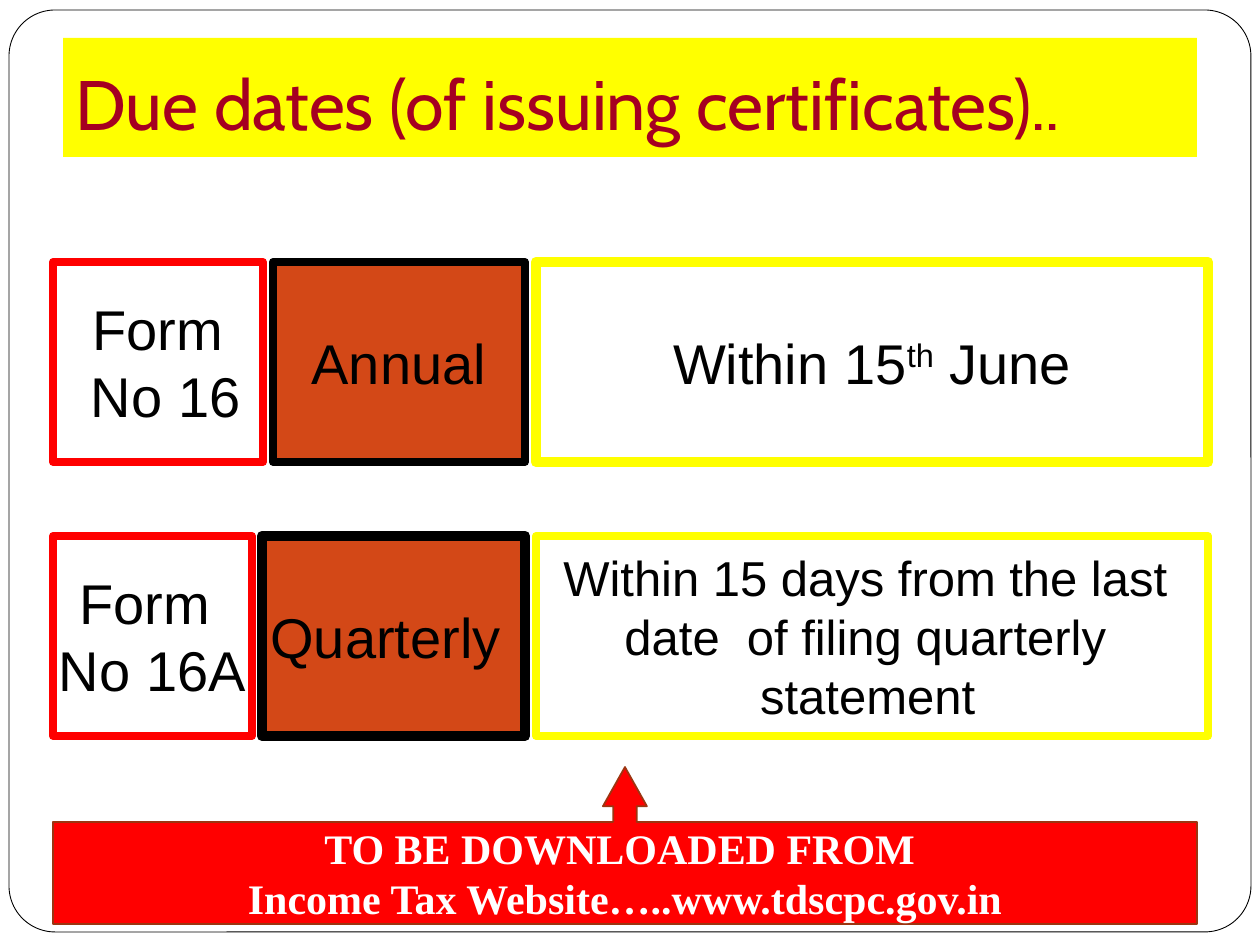
from dataclasses import dataclass

from pptx import Presentation
from pptx import util as u
from pptx.dml.color import RGBColor
from pptx.enum import shapes, text

EMU_PER_PX = 914400 / 126


@dataclass(frozen=True)
class Theme:
    white: str = "FFFFFF"
    black: str = "000000"
    yellow: str = "FFFF00"
    red: str = "FF0000"
    orange: str = "D34817"
    brown: str = "9C3511"
    crimson: str = "A50021"
    title_font: str = "Cabin"
    body_font: str = "Arial"
    callout_font: str = "Times New Roman"
    title_size: int = 40
    label_size: int = 32
    detail_size: int = 28
    callout_size: int = 24
    small_size: int = 18
    thin: float = 4.5
    thick: float = 6


THEME = Theme()
ROW_HEIGHT = 200


def px(length):
    return round(length * EMU_PER_PX)


def color(value):
    return RGBColor.from_string(value)


def add_run(paragraph, words, *, font=THEME.body_font, size=THEME.label_size,
            fill=THEME.black, bold=False, superscript=False):
    run = paragraph.add_run()
    run.text = words
    run.font.name = font
    run.font.size = u.Pt(size)
    run.font.bold = bold
    run.font.color.rgb = color(fill)
    if superscript:
        run.font._element.set("baseline", "30000")


def write_lines(frame, lines, *, align=text.PP_ALIGN.CENTER,
                anchor=text.MSO_ANCHOR.MIDDLE, wrap=True, **style):
    frame.word_wrap = wrap
    frame.auto_size = text.MSO_AUTO_SIZE.NONE
    frame.vertical_anchor = anchor
    for index, line in enumerate(lines):
        paragraph = frame.add_paragraph() if index else frame.paragraphs[0]
        paragraph.alignment = align
        for words, changes in ([(line, {})] if isinstance(line, str) else line):
            add_run(paragraph, words, **{**style, **changes})


def add_block(slide, kind, box, fill, line, width, adjustments=()):
    shape = slide.shapes.add_shape(kind, *map(px, box))
    shape.shadow.inherit = False
    shape.fill.solid()
    shape.fill.fore_color.rgb = color(fill)
    shape.line.color.rgb = color(line)
    shape.line.width = u.Pt(width)
    for index, value in enumerate(adjustments):
        shape.adjustments[index] = value
    return shape


def add_cell(slide, left, top, width, lines, fill, line, line_width, **style):
    shape = add_block(slide, shapes.MSO_SHAPE.RECTANGLE,
                      (left, top, width, ROW_HEIGHT), fill, line, line_width)
    write_lines(shape.text_frame, lines, wrap=False, **style)


def add_due_date(slide, top, columns, form, period, deadline, widths, **style):
    form_box, period_box, deadline_box = columns
    form_line, period_line, deadline_line = widths
    add_cell(slide, form_box[0], top, form_box[1], form,
             THEME.white, THEME.red, form_line)
    add_cell(slide, period_box[0], top, period_box[1], period,
             THEME.orange, THEME.black, period_line)
    add_cell(slide, deadline_box[0], top, deadline_box[1], deadline,
             THEME.white, THEME.yellow, deadline_line, **style)


def set_title(slide, words):
    title = slide.shapes.title
    title.left, title.top, title.width, title.height = map(px, (63, 38, 1134, 119))
    title.fill.solid()
    title.fill.fore_color.rgb = color(THEME.yellow)
    frame = title.text_frame
    frame.margin_left = frame.margin_right = frame.margin_bottom = u.Inches(0.1)
    frame.margin_top = u.Inches(0.05)
    write_lines(frame, [words], align=text.PP_ALIGN.LEFT,
                anchor=text.MSO_ANCHOR.BOTTOM, font=THEME.title_font,
                size=THEME.title_size, fill=THEME.crimson)


def add_frame(slide):
    frame = add_block(slide, shapes.MSO_SHAPE.ROUNDED_RECTANGLE,
                      (9, 10, 1242, 922), THEME.white, THEME.black, 0.5, [0.05])
    slide.shapes._spTree.insert(2, frame._element)


def add_download_callout(slide):
    callout = add_block(slide, shapes.MSO_SHAPE.UP_ARROW_CALLOUT,
                        (53, 767, 1144, 157), THEME.red, THEME.brown, 1,
                        [0.15, 0.14, 0.25, 0.65])
    write_lines(callout.text_frame,
                ["TO BE DOWNLOADED FROM ",
                 "Income Tax Website…..www.tdscpc.gov.in"],
                font=THEME.callout_font, size=THEME.callout_size,
                fill=THEME.white, bold=True)


def main():
    presentation = Presentation()
    presentation.slide_width = px(1260)
    presentation.slide_height = px(945)
    slide = presentation.slides.add_slide(presentation.slide_layouts[5])
    add_frame(slide)
    set_title(slide, "Due dates (of issuing certificates)..")
    add_due_date(slide, 262, [(53, 210), (273, 252), (536, 672)],
                 ["Form", " No 16"], ["Annual"],
                 [[("Within 15", {}), ("th", {"superscript": True}), (" June", {})]],
                 (THEME.thin, THEME.thin, THEME.thick))
    add_due_date(slide, 536, [(53, 199), (262, 263), (536, 672)],
                 ["Form ", "No 16A"], ["Quarterly "],
                 ["Within 15 days from the last ", "date  of filing quarterly ",
                  [("statement", {}), (" ", {"size": THEME.small_size})]],
                 (THEME.thin, THEME.thick, THEME.thin), size=THEME.detail_size)
    add_download_callout(slide)
    presentation.save("out.pptx")


if __name__ == "__main__":
    main()
